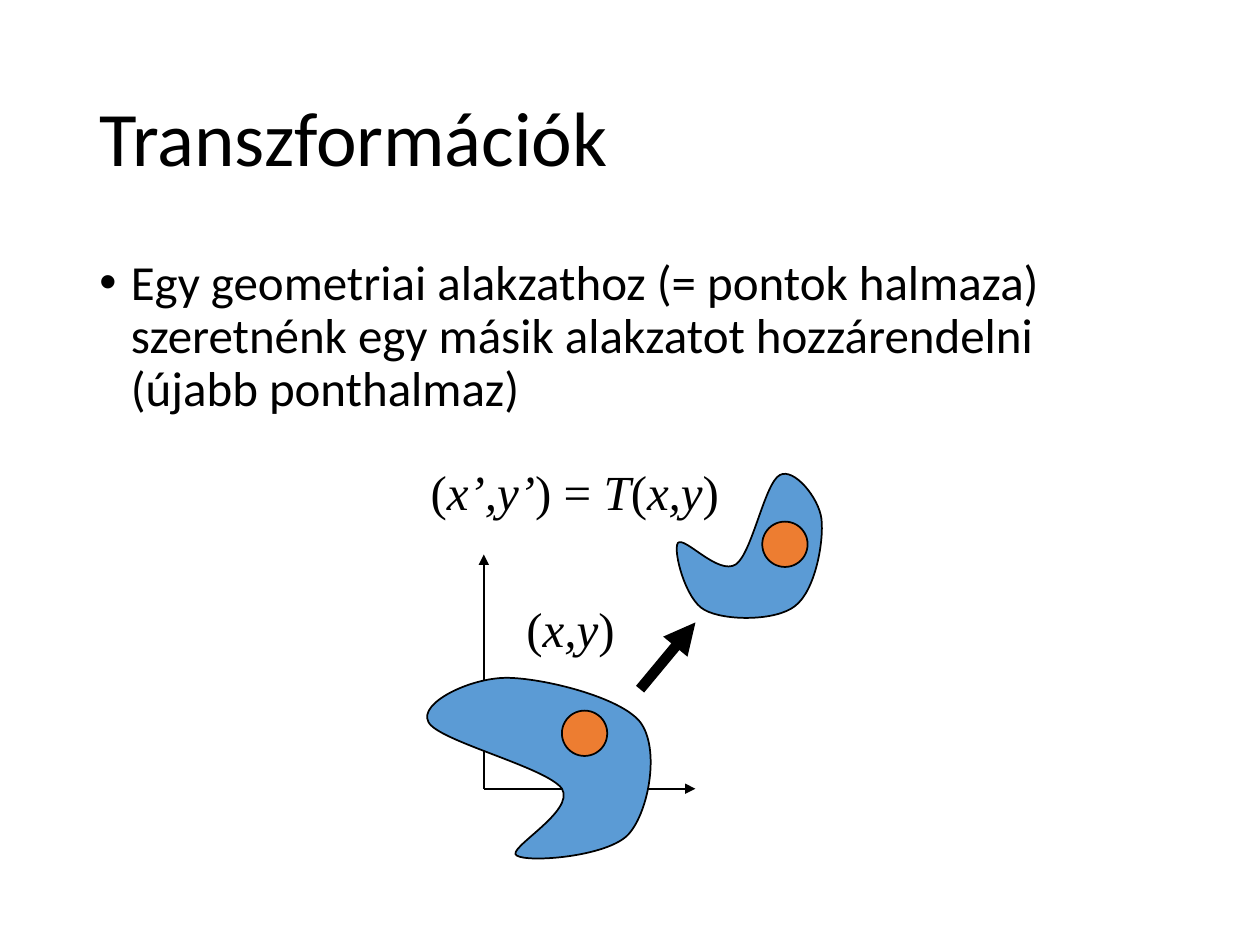
from dataclasses import dataclass

import pptx
import pptx.dml.color
import pptx.enum.shapes
import pptx.enum.text
import pptx.oxml
import pptx.oxml.ns
import pptx.util
from pptx.util import Inches

BLACK = pptx.dml.color.RGBColor(0x00, 0x00, 0x00)
BLUE = pptx.dml.color.RGBColor(0x5B, 0x9B, 0xD5)
ORANGE = pptx.dml.color.RGBColor(0xED, 0x7D, 0x31)
CIRCLE_SIZE = 0.36

Point = tuple[float, float]


@dataclass(frozen=True)
class Arrow:
    start: Point
    end: Point
    width: float = 1


@dataclass(frozen=True)
class Blob:
    """A closed outline: a start point, then three points for each Bézier curve."""

    start: Point
    curves: tuple[Point, ...]


@dataclass(frozen=True)
class Label:
    left: float
    top: float
    width: float
    runs: tuple[tuple[str, bool], ...]  # text, italic


AXES = (Arrow((3.84, 6.26), (3.84, 4.4)), Arrow((3.84, 6.26), (5.52, 6.26)))
MAPPING_ARROW = Arrow((5.08, 5.47), (5.52, 4.94), 6)

SOURCE_BLOB = Blob((5.08, 5.73), (
    (4.92, 5.53), (4.3, 5.38), (4.02, 5.38),
    (3.73, 5.38), (3.32, 5.58), (3.4, 5.73),
    (3.47, 5.88), (4.34, 6.09), (4.46, 6.26),
    (4.57, 6.44), (4.01, 6.74), (4.1, 6.79),
    (4.19, 6.85), (4.83, 6.8), (4.99, 6.62),
    (5.15, 6.44), (5.24, 5.94), (5.08, 5.73),
))
IMAGE_BLOB = Blob((6.31, 4.81), (
    (6.47, 4.69), (6.54, 4.3), (6.52, 4.12),
    (6.5, 3.95), (6.3, 3.71), (6.19, 3.77),
    (6.07, 3.83), (5.97, 4.39), (5.84, 4.48),
    (5.7, 4.57), (5.43, 4.25), (5.38, 4.31),
    (5.34, 4.37), (5.44, 4.76), (5.59, 4.84),
    (5.75, 4.93), (6.16, 4.93), (6.31, 4.81),
))

LABELS = (
    Label(4.08, 4.7, 1.02, (("(", False), ("x,y", True), (")", False))),
    Label(3.32, 3.61, 2.83, (
        ("(", False), ("x’,y’", True), (") = ", False), ("T", True),
        ("(", False), ("x,y", True), (")", False),
    )),
)


def add_element(parent, tag: str, **attributes: str):
    element = pptx.oxml.parse_xml(f"<{tag} {pptx.oxml.ns.nsdecls('a')}/>")
    for name, value in attributes.items():
        element.set(name, value)
    parent.append(element)
    return element


def set_font(paragraph, name: str, size: float) -> None:
    paragraph.font.name = name
    paragraph.font.size = pptx.util.Pt(size)
    paragraph.font.color.rgb = BLACK


def style_shape(shape, color: pptx.dml.color.RGBColor) -> None:
    shape.shadow.inherit = False
    shape.fill.solid()
    shape.fill.fore_color.rgb = color
    shape.line.color.rgb = BLACK
    shape.line.width = pptx.util.Pt(1)


def add_text(slide, top: float, height: float, text: str, size: float):
    """Add a full-width text box and return its frame."""
    box = slide.shapes.add_textbox(Inches(0.69), Inches(top), Inches(8.62), Inches(height))
    frame = box.text_frame
    frame.word_wrap = True
    paragraph = frame.paragraphs[0]
    paragraph.text = text
    paragraph.line_spacing = 0.9
    set_font(paragraph, "Calibri", size)
    return frame


def add_bullet(paragraph) -> None:
    properties = paragraph._p.get_or_add_pPr()
    properties.set("marL", str(Inches(0.25)))
    properties.set("indent", str(Inches(-0.25)))
    font_defaults = properties.find(pptx.oxml.ns.qn("a:defRPr"))
    add_element(properties, "a:buFont", typeface="Arial")
    add_element(properties, "a:buChar", char="•")
    properties.append(font_defaults)


def add_arrow(shapes, arrow: Arrow) -> None:
    connector = shapes.add_connector(
        pptx.enum.shapes.MSO_CONNECTOR.STRAIGHT,
        *(Inches(value) for value in arrow.start + arrow.end),
    )
    connector.line.color.rgb = BLACK
    connector.line.width = pptx.util.Pt(arrow.width)
    add_element(connector.line._get_or_add_ln(), "a:tailEnd", type="triangle")
    add_element(connector._element.spPr, "a:effectLst")


def add_blob(shapes, blob: Blob) -> None:
    """Build the control polygon, then turn each three segments into one curve."""
    builder = shapes.build_freeform(Inches(blob.start[0]), Inches(blob.start[1]))
    builder.add_line_segments([(Inches(x), Inches(y)) for x, y in blob.curves], close=True)
    shape = builder.convert_to_shape()
    segments = list(shape._element.iter(pptx.oxml.ns.qn("a:lnTo")))
    for first in range(0, len(segments), 3):
        outline = segments[first].getparent()
        curve = add_element(outline, "a:cubicBezTo")
        outline.replace(segments[first], curve)
        for segment in segments[first:first + 3]:
            curve.append(segment[0])
        for segment in segments[first + 1:first + 3]:
            outline.remove(segment)
    style_shape(shape, BLUE)


def add_circle(shapes, left: float, top: float) -> None:
    circle = shapes.add_shape(
        pptx.enum.shapes.MSO_SHAPE.OVAL,
        Inches(left), Inches(top), Inches(CIRCLE_SIZE), Inches(CIRCLE_SIZE),
    )
    style_shape(circle, ORANGE)


def add_label(shapes, label: Label) -> None:
    box = shapes.add_textbox(
        Inches(label.left), Inches(label.top), Inches(label.width), Inches(0.64)
    )
    frame = box.text_frame
    frame.word_wrap = False
    frame.auto_size = pptx.enum.text.MSO_AUTO_SIZE.SHAPE_TO_FIT_TEXT
    paragraph = frame.paragraphs[0]
    set_font(paragraph, "Times New Roman", 28)
    for text, italic in label.runs:
        run = paragraph.add_run()
        run.text = text
        run.font.italic = italic


def main() -> None:
    presentation = pptx.Presentation()
    presentation.slide_width = Inches(10)
    presentation.slide_height = Inches(7.5)
    slide = presentation.slides.add_slide(presentation.slide_layouts[6])

    title = add_text(slide, 0.4, 1.45, "Transzformációk", 44)
    title.vertical_anchor = pptx.enum.text.MSO_ANCHOR.MIDDLE
    body = add_text(
        slide, 2, 4.76,
        "Egy geometriai alakzathoz (= pontok halmaza) szeretnénk egy másik "
        "alakzatot hozzárendelni (újabb ponthalmaz)",
        28,
    )
    body.paragraphs[0].space_before = pptx.util.Pt(10)
    add_bullet(body.paragraphs[0])

    diagram = slide.shapes.add_group_shape().shapes
    for axis in AXES:
        add_arrow(diagram, axis)
    for blob in (SOURCE_BLOB, IMAGE_BLOB):
        add_blob(diagram, blob)
    add_circle(diagram, 4.46, 5.64)
    for label in LABELS:
        add_label(diagram, label)
    add_circle(diagram, 6.05, 4.14)
    add_arrow(diagram, MAPPING_ARROW)

    presentation.save("out.pptx")


if __name__ == "__main__":
    main()
